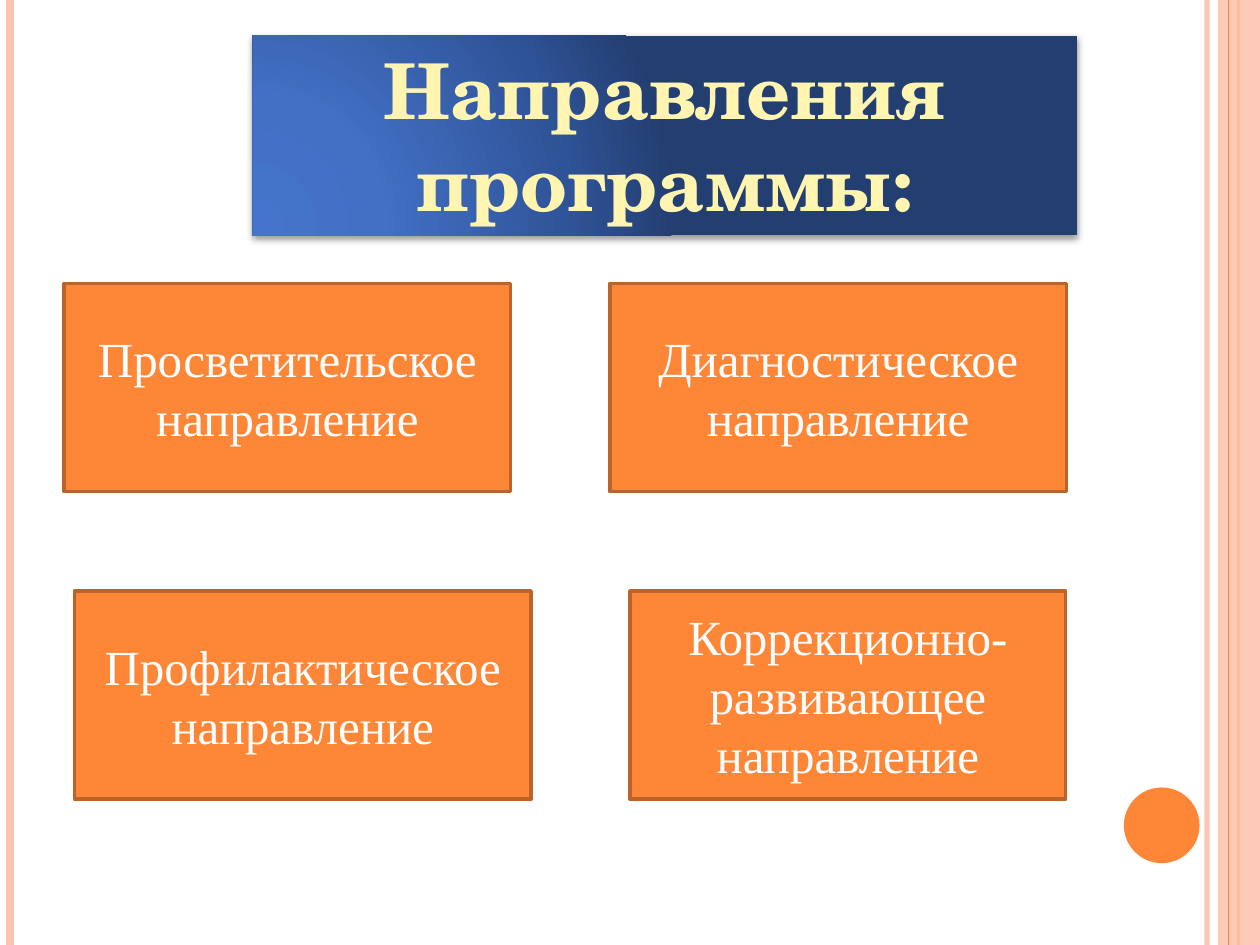
from lxml.etree import SubElement
from pptx import Presentation
from pptx.dml.color import RGBColor
from pptx.enum.shapes import MSO_CONNECTOR, MSO_SHAPE as SHAPE
from pptx.enum.text import MSO_ANCHOR as ANCHOR, PP_ALIGN
from pptx.oxml import parse_xml
from pptx.oxml.ns import nsdecls, qn
from pptx.util import Pt

WIDTH, HEIGHT = 720, 540
COLORS = {
    "orange": "FE8637", "border": "BC6329", "peach": "FEC3AE",
    "white": "FFFFFF", "cream": "FFF5B0", "shadow": "000000",
}
TITLE = "Направления программы:"
TITLE_BOX = (144.5, 20.5, 471, 114)
TITLE_GRADIENT = [(0, "4574CC"), (30, "4370C5"), (75, "2F5397"), (100, "233E70")]

# text, left, width
DIRECTION_ROWS = [
    [("Просветительское направление", 36.75, 255),
     ("Диагностическое направление", 348.5, 261)],
    [("Профилактическое направление", 42.5, 261),
     ("Коррекционно-развивающее направление", 360, 249)],
]
ROW_TOP, ROW_STEP, BOX_HEIGHT = 162, 175.75, 119

# x, color, width, opacity in percent
LINES_BELOW_BAND = [(689.75, "peach", 3, 93), (5.5, "peach", 4.5, 100),
                    (707.75, "orange", 1.5, 100)]
LINES_ABOVE_BAND = [(702, "orange", 0.75, 100)]
BAND = (696, 0, 24, HEIGHT)
DOT = (642.25, 450, 43.25, 43.25)


def rgb(name):
    return RGBColor.from_string(COLORS[name])


def set_opacity(fill_parent, percent):
    color = fill_parent.find(qn("a:solidFill"))[0]
    SubElement(color, qn("a:alpha"), val=str(percent * 1000))


def add_box(slide, kind, box, fill=None, border=None, opacity=100):
    s = slide.shapes.add_shape(kind, *map(Pt, box))
    s.shadow.inherit = False
    if fill:
        s.fill.solid()
        s.fill.fore_color.rgb = rgb(fill)
    if border:
        s.line.color.rgb = rgb(border)
        s.line.width = Pt(2)
    else:
        s.line.fill.background()
    if opacity < 100:
        set_opacity(s._element.spPr, opacity)
    return s


def add_rules(slide, rules):
    """Draw full-height vertical lines."""
    for x, color, width, opacity in rules:
        line = slide.shapes.add_connector(
            MSO_CONNECTOR.STRAIGHT, Pt(x), Pt(0), Pt(x), Pt(HEIGHT))
        line.line.color.rgb = rgb(color)
        line.line.width = Pt(width)
        spPr = line._element.spPr
        SubElement(spPr, qn("a:effectLst"))
        if opacity < 100:
            set_opacity(spPr.find(qn("a:ln")), opacity)


def set_text(s, text, size, font, color, bold=False, anchor=ANCHOR.MIDDLE):
    tf = s.text_frame
    tf.word_wrap = True
    tf.vertical_anchor = anchor
    p = tf.paragraphs[0]
    p.alignment = PP_ALIGN.CENTER
    r = p.add_run()
    r.text = text
    r.font.size, r.font.name, r.font.bold = Pt(size), font, bold
    r.font.color.rgb = rgb(color)


def add_title(slide):
    s = add_box(slide, SHAPE.RECTANGLE, TITLE_BOX)
    stops = "".join(
        f'<a:gs pos="{pos * 1000}"><a:srgbClr val="{color}"/></a:gs>'
        for pos, color in TITLE_GRADIENT)
    spPr = s._element.spPr
    spPr.find(qn("a:prstGeom")).addnext(parse_xml(
        f'<a:gradFill {nsdecls("a")} rotWithShape="1"><a:gsLst>{stops}</a:gsLst>'
        '<a:path path="circle">'
        '<a:fillToRect l="5000" t="100000" r="120000" b="10000"/>'
        '</a:path></a:gradFill>'))
    shadow = SubElement(
        spPr.find(qn("a:effectLst")), qn("a:outerShdw"), blurRad=str(Pt(4)),
        dist=str(Pt(1.6)), dir="5400000", rotWithShape="0")
    color = SubElement(shadow, qn("a:srgbClr"), val=COLORS["shadow"])
    SubElement(color, qn("a:alpha"), val="42000")
    set_text(s, TITLE, 44, "TeX Gyre Schola", "cream", bold=True, anchor=ANCHOR.TOP)


def main():
    prs = Presentation()
    prs.slide_width, prs.slide_height = Pt(WIDTH), Pt(HEIGHT)
    slide = prs.slides.add_slide(prs.slide_layouts[6])

    add_rules(slide, LINES_BELOW_BAND)
    add_box(slide, SHAPE.RECTANGLE, BAND, "peach", opacity=87)
    add_rules(slide, LINES_ABOVE_BAND)
    add_box(slide, SHAPE.OVAL, DOT, "orange")

    for i, row in enumerate(DIRECTION_ROWS):
        for text, left, width in row:
            box = (left, ROW_TOP + i * ROW_STEP, width, BOX_HEIGHT)
            s = add_box(slide, SHAPE.FLOWCHART_PROCESS, box, "orange", "border")
            set_text(s, text, 28, "Times New Roman", "white")

    add_title(slide)
    prs.save("out.pptx")


if __name__ == "__main__":
    main()
